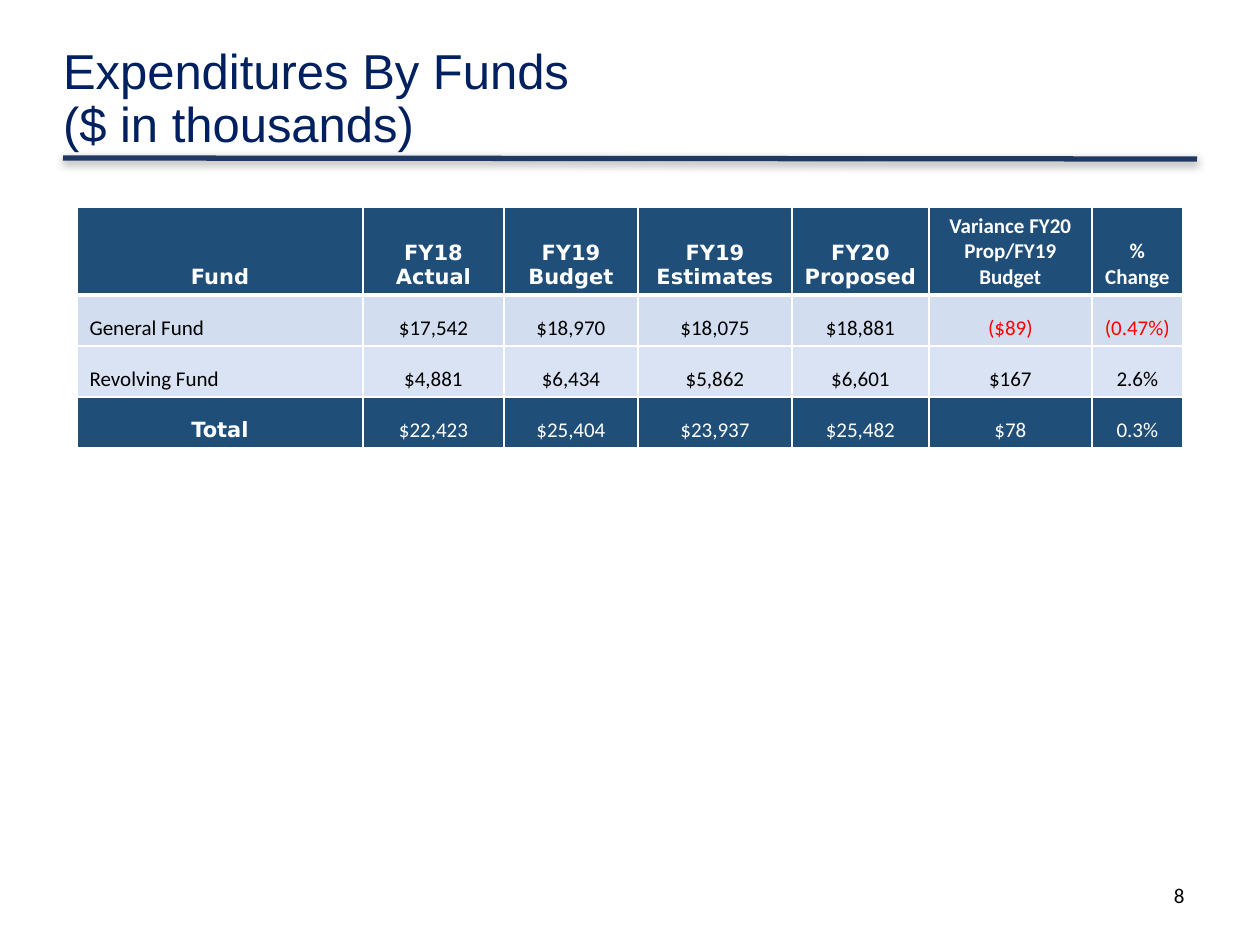
from lxml.etree import SubElement
from pptx import Presentation
from pptx.dml.color import RGBColor
from pptx.enum.shapes import MSO_CONNECTOR
from pptx.enum.text import MSO_ANCHOR, MSO_AUTO_SIZE, PP_ALIGN
from pptx.oxml import parse_xml
from pptx.oxml.ns import qn
from pptx.util import Emu, Pt

NAVY = RGBColor(0x00, 0x20, 0x60)
RULE_BLUE = RGBColor(0x20, 0x38, 0x64)
HEADER_BLUE = RGBColor(0x1F, 0x4E, 0x79)
GENERAL_BLUE = RGBColor(0xD2, 0xDE, 0xEF)
REVOLVING_BLUE = RGBColor(0xDA, 0xE3, 0xF3)
WHITE = RGBColor(0xFF, 0xFF, 0xFF)
BLACK = RGBColor(0x00, 0x00, 0x00)
RED = RGBColor(0xFF, 0x00, 0x00)

BODY_FONT, LABEL_FONT = "Calibri", "DejaVu Sans"
COLUMN_WIDTHS = [286, 141, 134, 154, 137, 163, 91]
ROW_HEIGHTS = [88, 51, 51, 51]
ROW_FILLS = [HEADER_BLUE, GENERAL_BLUE, REVOLVING_BLUE, HEADER_BLUE]
FUND_ROWS = [
    ["Fund", "FY18\nActual", "FY19\nBudget", "FY19\nEstimates", "FY20\nProposed",
     "Variance FY20 Prop/FY19 Budget", "%\nChange"],
    ["General Fund", "$17,542", "$18,970", "$18,075", "$18,881", "($89)", "(0.47%)"],
    ["Revolving Fund", "$4,881", "$6,434", "$5,862", "$6,601", "$167", "2.6%"],
    ["Total", "$22,423", "$25,404", "$23,937", "$25,482", "$78", "0.3%"],
]
SHADOW_XML = (
    '<a:effectLst xmlns:a="http://schemas.openxmlformats.org/drawingml/2006/main">'
    '<a:outerShdw blurRad="63500" dist="20320" dir="5400000" rotWithShape="0">'
    '<a:srgbClr val="000000"><a:alpha val="38000"/></a:srgbClr>'
    '</a:outerShdw></a:effectLst>'
)


def px(length):
    """Turn whole pixels into EMU."""
    return Emu(round(length * 914400 / 126))


def add_run(paragraph, text, size, font_name, color, bold=False):
    """Add one formatted run to a paragraph."""
    run = paragraph.add_run()
    run.text = text
    run.font.size = Pt(size)
    run.font.name = font_name
    run.font.bold = bold
    run.font.color.rgb = color


def add_title(slide, left, top, width, height):
    """Place the two-line title in the title placeholder."""
    title = slide.shapes.title
    title.left, title.top, title.width, title.height = map(px, (left, top, width, height))
    frame = title.text_frame
    frame.auto_size = MSO_AUTO_SIZE.NONE
    frame.word_wrap = True
    frame.vertical_anchor = MSO_ANCHOR.MIDDLE
    frame.margin_left = frame.margin_right = frame.margin_top = frame.margin_bottom = 0
    paragraph = frame.paragraphs[0]
    paragraph.alignment = PP_ALIGN.LEFT
    paragraph.line_spacing = 0.9
    add_run(paragraph, "Expenditures By Funds", 28, "Arial", NAVY)
    paragraph.add_line_break()
    add_run(paragraph, "($ in thousands)", 28, "Arial", NAVY)


def add_title_rule(slide, left, top, width, height):
    """Draw the shadowed rule under the title."""
    rule = slide.shapes.add_connector(
        MSO_CONNECTOR.STRAIGHT, px(left), px(top), px(left + width), px(top + height))
    rule.line.color.rgb = RULE_BLUE
    rule.line.width = Pt(3)
    rule._element.spPr.append(parse_xml(SHADOW_XML))


def set_borders(cell, bottom_width):
    """Give a cell white borders, with its own bottom width."""
    properties = cell._tc.get_or_add_tcPr()
    for index, (side, width) in enumerate(
            [("lnL", 1), ("lnR", 1), ("lnT", 1), ("lnB", bottom_width)]):
        border = SubElement(properties, qn(f"a:{side}"), w=str(Pt(width)))
        fill = SubElement(border, qn("a:solidFill"))
        SubElement(fill, qn("a:srgbClr"), val=str(WHITE))
        properties.remove(border)
        properties.insert(index, border)


def fill_cell(cell, text, row, column):
    """Write and format one cell by its place in the table."""
    is_dark = ROW_FILLS[row] == HEADER_BLUE
    is_label = is_dark and (column == 0 or row == 0 and column < 5)
    color = WHITE if is_dark else RED if text.startswith("(") else BLACK
    cell.fill.solid()
    cell.fill.fore_color.rgb = ROW_FILLS[row]
    cell.vertical_anchor = MSO_ANCHOR.BOTTOM
    cell.margin_top = cell.margin_bottom = px(5)
    for index, line in enumerate(text.split("\n")):
        frame = cell.text_frame
        paragraph = frame.add_paragraph() if index else frame.paragraphs[0]
        paragraph.alignment = PP_ALIGN.CENTER if column or is_dark else PP_ALIGN.LEFT
        add_run(paragraph, line, 12, LABEL_FONT if is_label else BODY_FONT,
                color, is_label or row == 0)
    set_borders(cell, 1 if row else 3)


def add_fund_table(slide, left, top):
    """Build the table of expenditures by fund."""
    table = slide.shapes.add_table(
        len(ROW_HEIGHTS), len(COLUMN_WIDTHS), px(left), px(top),
        px(sum(COLUMN_WIDTHS)), px(sum(ROW_HEIGHTS))).table
    for column, width in zip(table.columns, COLUMN_WIDTHS):
        column.width = px(width)
    for row, height in zip(table.rows, ROW_HEIGHTS):
        row.height = px(height)
    for row, texts in enumerate(FUND_ROWS):
        for column, text in enumerate(texts):
            fill_cell(table.cell(row, column), text, row, column)


def add_page_number(slide, left, top, width, height):
    """Place the page number at the lower right."""
    frame = slide.shapes.add_textbox(*map(px, (left, top, width, height))).text_frame
    frame.word_wrap = True
    paragraph = frame.paragraphs[0]
    paragraph.alignment = PP_ALIGN.RIGHT
    add_run(paragraph, "8", 12, BODY_FONT, BLACK)


def main():
    """Build and save the presentation."""
    presentation = Presentation()
    presentation.slide_width, presentation.slide_height = px(1260), px(945)
    slide = presentation.slides.add_slide(presentation.slide_layouts[5])
    add_title_rule(slide, 63, 158, 1134, 1)
    add_title(slide, 63, 42, 864, 116)
    add_fund_table(slide, 77, 207)
    add_page_number(slide, 903, 876, 294, 50)
    presentation.save("out.pptx")


if __name__ == "__main__":
    main()
